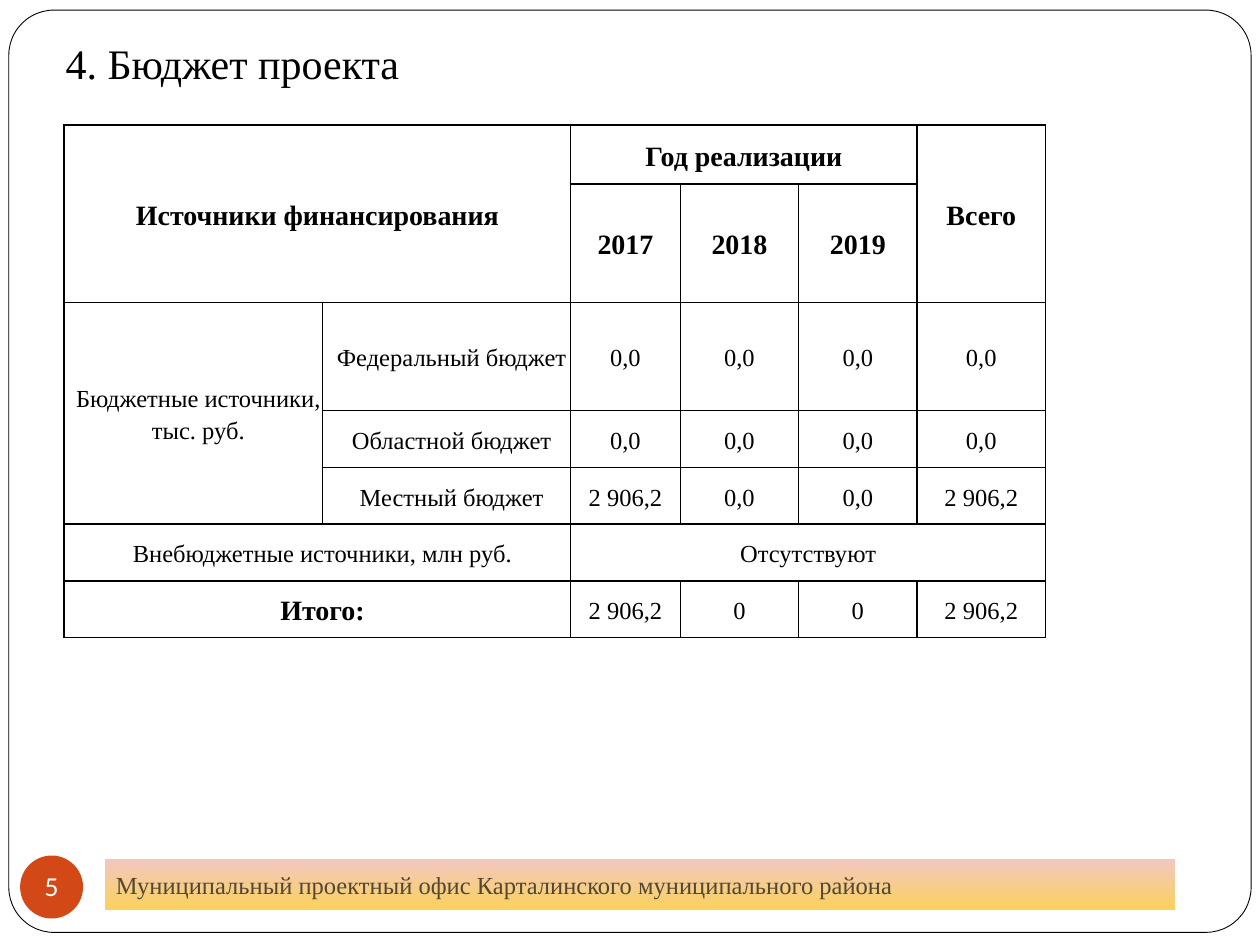
from lxml import etree
from pptx import Presentation
from pptx.dml.color import RGBColor
from pptx.enum import shapes, text
from pptx.oxml import ns
from pptx.util import Inches, Pt

COLORS = {
    "paper": "FFFFFF",
    "ink": "000000",
    "badge": "D34817",
    "banner_top": "F3C7C1",
    "banner_bottom": "FAD25C",
    "banner_text": "534733",
}
SERIF, SANS = "Times New Roman", "Lato"

COLUMNS = [2.05, 1.97, 0.87, 0.94, 0.94, 1.02]
ROWS = [0.47, 0.94, 0.86, 0.45, 0.45, 0.45, 0.45]
BUDGET = [
    ["Источники финансирования", None, "Год реализации", None, None, "Всего"],
    [None, None, "2017", "2018", "2019", None],
    ["Бюджетные источники, тыс. руб.", "Федеральный бюджет", "0,0", "0,0", "0,0", "0,0"],
    [None, "Областной бюджет", "0,0", "0,0", "0,0", "0,0"],
    [None, "Местный бюджет", "2 906,2", "0,0", "0,0", "2 906,2"],
    ["Внебюджетные источники, млн руб.", None, "Отсутствуют", None, None, None],
    ["Итого:", None, "2 906,2", "0", "0", "2 906,2"],
]
# First and last cell of each merged area, as (row, column)
MERGES = [
    ((0, 0), (1, 1)), ((0, 2), (0, 4)), ((0, 5), (1, 5)), ((2, 0), (4, 0)),
    ((5, 0), (5, 1)), ((5, 2), (5, 5)), ((6, 0), (6, 1)),
]
HEADER_ROWS = 2


def rgb(name):
    return RGBColor.from_string(COLORS[name])


class SlideBuilder:
    def __init__(self, deck):
        self.page = deck.slides.add_slide(deck.slide_layouts[5])

    def label(self, frame, words, size, color="ink", font=SERIF, bold=False,
              align=text.PP_ALIGN.LEFT):
        para = frame.paragraphs[0]
        para.text = words
        para.alignment = align
        para.font.name, para.font.size, para.font.bold = font, Pt(size), bold
        para.font.color.rgb = rgb(color)
        return para

    def inset(self, frame, margin, anchor):
        frame.margin_left = frame.margin_right = Inches(margin)
        frame.margin_top = frame.margin_bottom = Inches(margin)
        frame.vertical_anchor = anchor

    def title(self, words, left, top, width, height):
        box = self.page.shapes.title
        box.left, box.top = Inches(left), Inches(top)
        box.width, box.height = Inches(width), Inches(height)
        frame = box.text_frame
        frame.auto_size = text.MSO_AUTO_SIZE.NONE
        self.inset(frame, 0.09, text.MSO_ANCHOR.TOP)
        self.label(frame, words, 24)

    def shape(self, kind, left, top, width, height, fill=None, line=None):
        box = self.page.shapes.add_shape(
            kind, Inches(left), Inches(top), Inches(width), Inches(height))
        box.shadow.inherit = False
        if fill:
            box.fill.solid()
            box.fill.fore_color.rgb = rgb(fill)
        if line:
            box.line.color.rgb = rgb(line)
            box.line.width = Pt(0.5)
        else:
            box.line.fill.background()
        return box

    def frame(self, left, top, width, height):
        box = self.shape(shapes.MSO_SHAPE.ROUNDED_RECTANGLE,
                         left, top, width, height, "paper", "ink")
        box.adjustments[0] = 0.049
        # Keep the frame behind the title
        self.page.shapes.title.element.addprevious(box.element)

    def badge(self, words, left, top, size):
        box = self.shape(shapes.MSO_SHAPE.OVAL, left, top, size, size, "badge")
        self.inset(box.text_frame, 0, text.MSO_ANCHOR.MIDDLE)
        box.text_frame.word_wrap = False
        self.label(box.text_frame, words, 14, "paper", SANS, align=text.PP_ALIGN.CENTER)

    def banner(self, words, left, top, width, height):
        box = self.shape(shapes.MSO_SHAPE.RECTANGLE, left, top, width, height)
        box.fill.gradient()
        box.fill.gradient_angle = 270
        for stop, color in zip(box.fill.gradient_stops, ("banner_top", "banner_bottom")):
            stop.color.rgb = rgb(color)
        self.inset(box.text_frame, 0.09, text.MSO_ANCHOR.MIDDLE)
        self.label(box.text_frame, words, 14, "banner_text")

    def borders(self, cell):
        props = cell._tc.get_or_add_tcPr()
        for place, side in enumerate(("lnL", "lnR", "lnT", "lnB")):
            line = etree.Element(ns.qn("a:" + side), w=str(Pt(1)))
            fill = etree.SubElement(line, ns.qn("a:solidFill"))
            etree.SubElement(fill, ns.qn("a:srgbClr"), val=COLORS["ink"])
            props.insert(place, line)

    def table(self, left, top):
        holder = self.page.shapes.add_table(
            len(ROWS), len(COLUMNS), Inches(left), Inches(top),
            Inches(sum(COLUMNS)), Inches(sum(ROWS)))
        grid = holder.table
        for column, width in zip(grid.columns, COLUMNS):
            column.width = Inches(width)
        for row, height in zip(grid.rows, ROWS):
            row.height = Inches(height)
        for first, last in MERGES:
            grid.cell(*first).merge(grid.cell(*last))
        for r, row in enumerate(BUDGET):
            for c, words in enumerate(row):
                self.cell(grid.cell(r, c), words, r, c)

    def cell(self, cell, words, r, c):
        self.inset(cell, 0, text.MSO_ANCHOR.MIDDLE)
        cell.fill.solid()
        cell.fill.fore_color.rgb = rgb("paper")
        self.borders(cell)
        if words is None:
            return
        strong = r < HEADER_ROWS or words == "Итого:"
        para = self.label(cell.text_frame, words, 16 if strong else 14, bold=strong,
                          align=text.PP_ALIGN.CENTER)
        para.line_spacing = 1.15
        # Source names are indented a little
        if r >= HEADER_ROWS and c < 2:
            para._p.get_or_add_pPr().set("marL", str(Inches(0.08)))


def main():
    deck = Presentation()
    deck.slide_width, deck.slide_height = Inches(10), Inches(7.5)
    slide = SlideBuilder(deck)

    # Frame, page number and heading
    slide.frame(0.07, 0.08, 9.86, 7.32)
    slide.badge("5", 0.16, 6.79, 0.5)
    slide.title("4. Бюджет проекта", 0.43, 0.21, 7.69, 0.52)

    # Budget by source and year
    slide.table(0.51, 0.99)

    # Footer
    slide.banner("Муниципальный проектный офис Карталинского муниципального района",
                 0.83, 6.82, 8.5, 0.4)
    deck.save("out.pptx")


if __name__ == "__main__":
    main()
